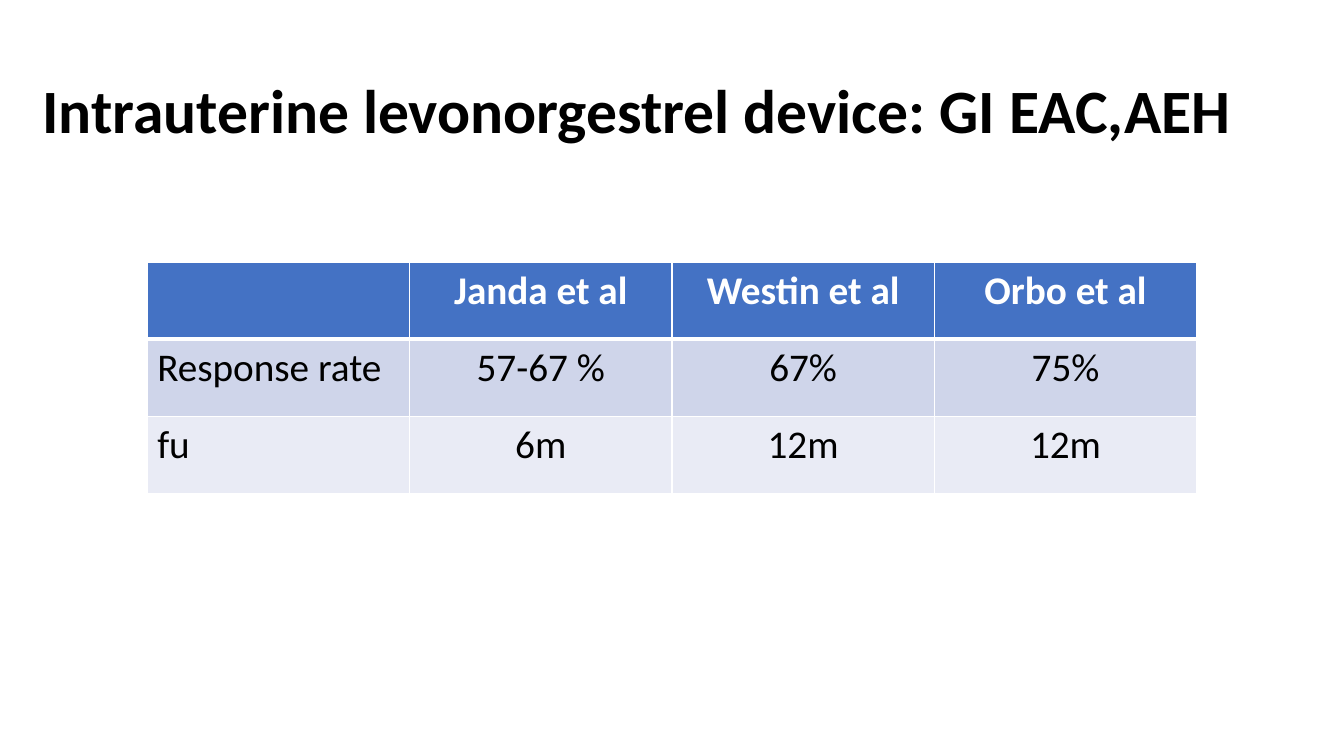
from lxml import etree
from pptx import Presentation
from pptx.dml.color import RGBColor
from pptx.enum.text import MSO_ANCHOR, MSO_AUTO_SIZE, PP_ALIGN
from pptx.oxml.ns import qn
from pptx.util import Inches, Pt

LEFT, CENTER = PP_ALIGN.LEFT, PP_ALIGN.CENTER
MIDDLE = MSO_ANCHOR.MIDDLE
NO_FIT = MSO_AUTO_SIZE.NONE

FONT = "Calibri"
COLORS = {
    "text": "000000",
    "white": "FFFFFF",
    "head": "4472C4",
    "odd": "CFD5EA",
    "even": "E9EBF5",
}
STUDIES = [
    ["", "Janda et al", "Westin et al", "Orbo et al"],
    ["Response rate", "57-67 %", "67%", "75%"],
    ["fu", "6m", "12m", "12m"],
]


def rgb(name):
    return RGBColor.from_string(COLORS[name])


def style(para, size, color, bold, align):
    para.alignment = align
    font = para.font
    font.name, font.size, font.bold = FONT, Pt(size), bold
    font.color.rgb = rgb(color)
    for run in para.runs:
        run.font.name, run.font.size, run.font.bold = FONT, Pt(size), bold
        run.font.color.rgb = rgb(color)


def add_title(slide, text):
    title = slide.shapes.title
    title.left, title.top = Inches(0.32), Inches(0.4)
    title.width, title.height = Inches(12.75), Inches(1.45)
    frame = title.text_frame
    frame.text = text
    frame.word_wrap = True
    frame.auto_size = NO_FIT
    frame.vertical_anchor = MIDDLE
    para = frame.paragraphs[0]
    para.line_spacing = 0.9
    style(para, 44, "text", True, LEFT)


def set_edges(cell, widths):
    """Draw white cell borders; widths maps L, R, T, B to points."""
    props = cell._tc.get_or_add_tcPr()
    for spot, (side, width) in enumerate(widths.items()):
        line = etree.Element(qn(f"a:ln{side}"), w=str(Pt(width)))
        fill = etree.SubElement(line, qn("a:solidFill"))
        etree.SubElement(fill, qn("a:srgbClr"), val=COLORS["white"])
        props.insert(spot, line)


def add_grid(slide, rows):
    count, cols = len(rows), len(rows[0])
    frame = slide.shapes.add_table(
        count, cols, Inches(1.46), Inches(2.6), Inches(10.41), Inches(2.3))
    table = frame.table
    for r, row in enumerate(rows):
        head = r == 0
        band = "head" if head else ("odd" if r % 2 else "even")
        for c, text in enumerate(row):
            cell = table.cell(r, c)
            cell.fill.solid()
            cell.fill.fore_color.rgb = rgb(band)
            # A thicker rule parts the header from the body
            set_edges(cell, {"L": 1, "R": 1, "T": 3 if r == 1 else 1,
                             "B": 3 if head else 1})
            cell.text_frame.text = text
            style(cell.text_frame.paragraphs[0], 28,
                  "white" if head else "text", head, CENTER if c else LEFT)


def main():
    deck = Presentation()
    deck.slide_width, deck.slide_height = Inches(13.33), Inches(7.5)
    slide = deck.slides.add_slide(deck.slide_layouts[5])

    # Heading
    add_title(slide, "Intrauterine levonorgestrel device: GI EAC,AEH")

    # Study results
    add_grid(slide, STUDIES)

    deck.save("out.pptx")


if __name__ == "__main__":
    main()
